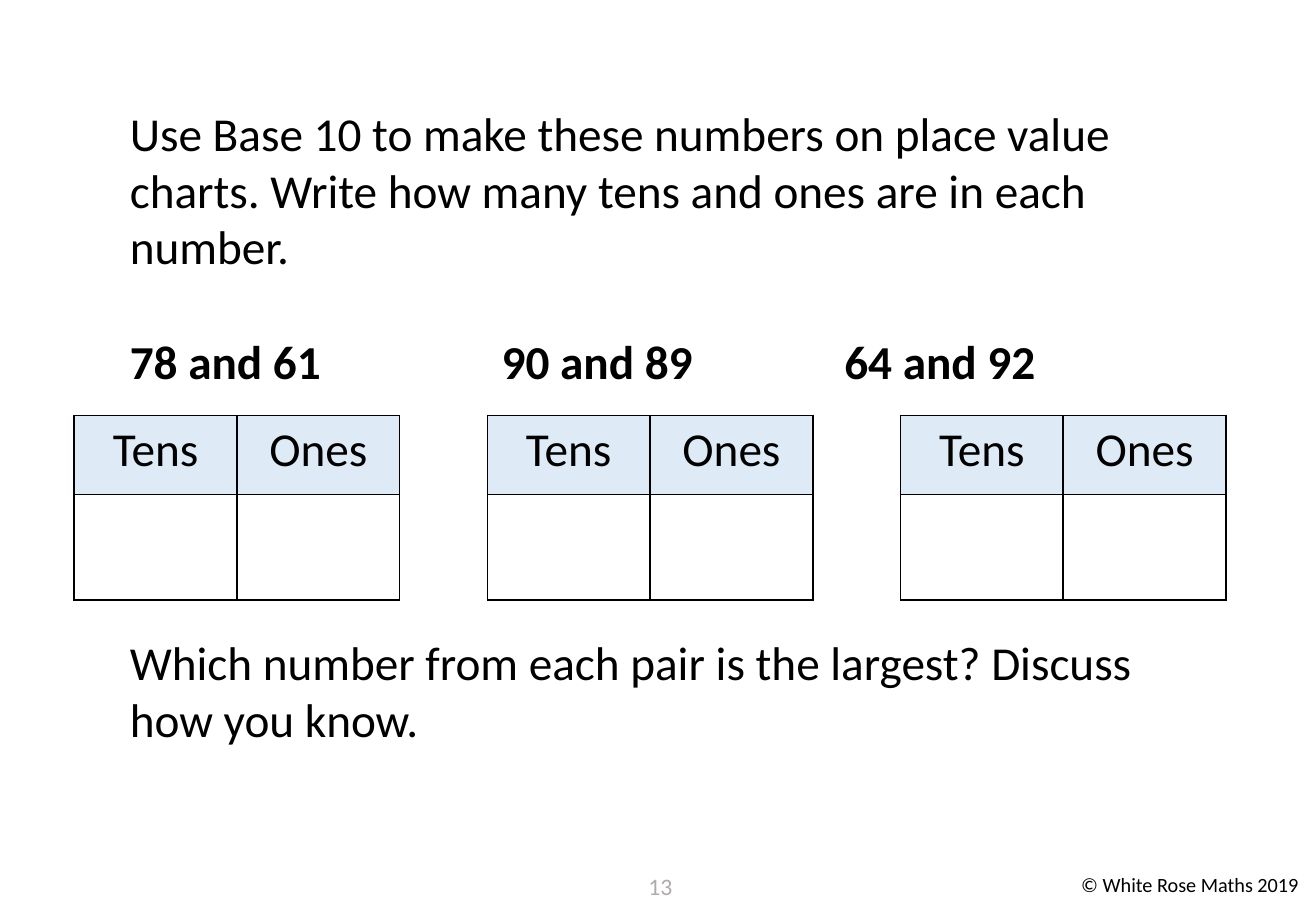
from dataclasses import dataclass

from lxml import etree
from pptx import Presentation
from pptx.dml.color import RGBColor
from pptx.enum.text import PP_ALIGN
from pptx.oxml.ns import qn
from pptx.util import Inches, Pt

LEFT, CENTER = PP_ALIGN.LEFT, PP_ALIGN.CENTER
FONT_NAME = "Calibri"
BODY_SIZE = 28
COLORS = {"text": "000000", "number": "AFABAB", "header": "DEEBF7", "border": "000000"}

CHART_LEFT, CHART_TOP, CHART_PITCH = 0.61, 3.42, 3.4
COLUMN_WIDTH = 1.34
ROW_HEIGHTS = (0.65, 0.87)
HEADINGS = ("Tens", "Ones")
NUMBER_PAIRS = ("78 and 61", "90 and 89", "64 and 92")
PAIR_TABS = (3.06, 5.88)


@dataclass(frozen=True)
class Line:
    text: str
    size: int = BODY_SIZE
    color: str = "text"
    bold: bool = False
    alignment: PP_ALIGN = LEFT
    space_before: float = 0
    tabs: tuple[float, ...] = ()


@dataclass(frozen=True)
class TextBlock:
    left: float
    top: float
    width: float
    height: float
    lines: tuple[Line, ...]


TEXT_BLOCKS = (
    TextBlock(8.8, 7.13, 2.03, 0.3, (Line("© White Rose Maths 2019", size=12),)),
    TextBlock(5.18, 7.13, 0.51, 0.4,
              (Line("13", size=14, color="number", alignment=CENTER),)),
    TextBlock(0.97, 0.81, 8.81, 5.4, (
        Line("Use Base 10 to make these numbers on place value charts. "
             "Write how many tens and ones are in each number."),
        Line("\t".join(NUMBER_PAIRS), bold=True, space_before=34, tabs=PAIR_TABS),
        Line("Which number from each pair is the largest? Discuss how you know.",
             space_before=145),
    )),
)


def add_tabs(paragraph, positions: tuple[float, ...]) -> None:
    tab_list = etree.SubElement(paragraph._p.get_or_add_pPr(), qn("a:tabLst"))
    for position in positions:
        etree.SubElement(tab_list, qn("a:tab"), pos=str(Inches(position)), algn="l")


def write_line(paragraph, line: Line) -> None:
    if line.tabs:
        add_tabs(paragraph, line.tabs)
    paragraph.text = line.text
    paragraph.alignment = line.alignment
    paragraph.space_before = Pt(line.space_before)
    font_format = {"name": FONT_NAME, "size": Pt(line.size), "bold": line.bold}
    for attribute, value in font_format.items():
        setattr(paragraph.font, attribute, value)
    paragraph.font.color.rgb = RGBColor.from_string(COLORS[line.color])


def add_text_block(slide, block: TextBlock) -> None:
    box = slide.shapes.add_textbox(Inches(block.left), Inches(block.top),
                                   Inches(block.width), Inches(block.height))
    frame = box.text_frame
    frame.word_wrap = True
    for index, line in enumerate(block.lines):
        paragraph = frame.add_paragraph() if index else frame.paragraphs[0]
        write_line(paragraph, line)


def add_borders(cell) -> None:
    properties = cell._tc.get_or_add_tcPr()
    for side in ("lnL", "lnR", "lnT", "lnB"):
        border = etree.SubElement(properties, qn(f"a:{side}"), w=str(Pt(1)))
        fill = etree.SubElement(border, qn("a:solidFill"))
        etree.SubElement(fill, qn("a:srgbClr"), val=COLORS["border"])


def add_place_value_chart(slide, left: float) -> None:
    table = slide.shapes.add_table(
        len(ROW_HEIGHTS), len(HEADINGS), Inches(left), Inches(CHART_TOP),
        Inches(COLUMN_WIDTH * len(HEADINGS)), Inches(sum(ROW_HEIGHTS))).table
    table.first_row = table.horz_banding = False
    for row, height in zip(table.rows, ROW_HEIGHTS):
        row.height = Inches(height)
    for cell in table.iter_cells():
        add_borders(cell)
        cell.fill.background()
    for column, heading in enumerate(HEADINGS):
        table.columns[column].width = Inches(COLUMN_WIDTH)
        cell = table.cell(0, column)
        cell.fill.solid()
        cell.fill.fore_color.rgb = RGBColor.from_string(COLORS["header"])
        write_line(cell.text_frame.paragraphs[0], Line(heading, alignment=CENTER))


def main() -> None:
    presentation = Presentation()
    presentation.slide_width = Inches(10.83)
    presentation.slide_height = Inches(7.5)
    slide = presentation.slides.add_slide(presentation.slide_layouts.get_by_name("Blank"))
    for block in TEXT_BLOCKS:
        add_text_block(slide, block)
    for index in range(len(NUMBER_PAIRS)):
        add_place_value_chart(slide, CHART_LEFT + index * CHART_PITCH)
    presentation.save("out.pptx")


if __name__ == "__main__":
    main()
